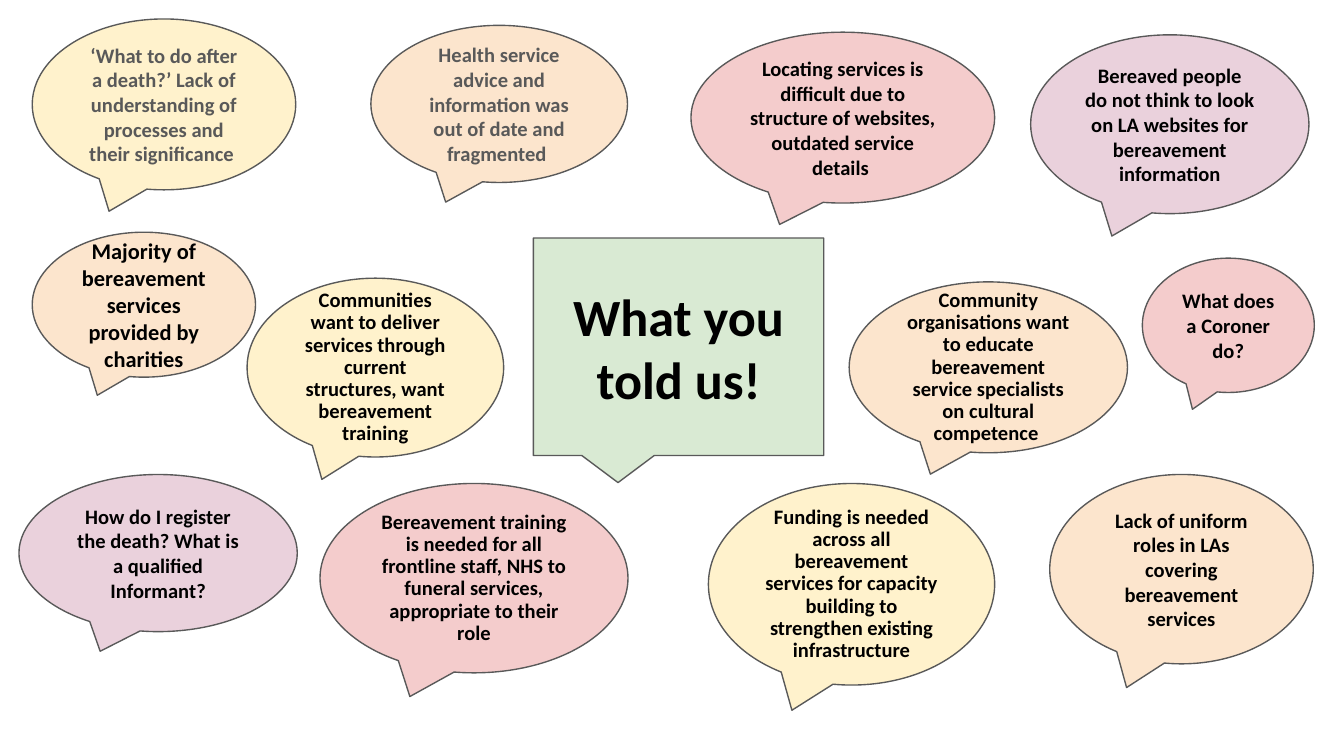
from pptx import Presentation
from pptx.dml.color import RGBColor
from pptx.enum.shapes import MSO_SHAPE
from pptx.enum.text import MSO_ANCHOR, PP_ALIGN
from pptx.util import Cm, Pt

OVAL = MSO_SHAPE.OVAL_CALLOUT
BOX = MSO_SHAPE.ROUNDED_RECTANGULAR_CALLOUT
MIDDLE = MSO_ANCHOR.MIDDLE
CENTER = PP_ALIGN.CENTER

PINK = RGBColor(0xF4, 0xCC, 0xCC)
MAUVE = RGBColor(0xEA, 0xD1, 0xDC)
PEACH = RGBColor(0xFC, 0xE5, 0xCD)
CREAM = RGBColor(0xFF, 0xF2, 0xCC)
GREEN = RGBColor(0xD9, 0xEA, 0xD3)
BLACK = RGBColor(0x00, 0x00, 0x00)
GRAY = RGBColor(0x59, 0x59, 0x59)

prs = Presentation()
prs.slide_width = Cm(25.4)
prs.slide_height = Cm(14.29)
slide = prs.slides.add_slide(prs.slide_layouts[6])

bubbles = [
    (OVAL, 13.06, 0.61, 5.74, 3.23, PINK, BLACK, 11, 1,
     "Locating services is difficult due to structure of websites, outdated service details "),
    (OVAL, 19.48, 0.66, 5.26, 3.38, MAUVE, BLACK, 11, 1,
     "Bereaved people do not think to look on LA websites for bereavement information"),
    (OVAL, 0.61, 4.39, 4.22, 2.74, PEACH, BLACK, 12, 1,
     "Majority of bereavement services provided by charities"),
    (OVAL, 19.84, 8.97, 4.98, 3.58, PEACH, BLACK, 11, 1,
     "Lack of uniform roles in LAs covering bereavement services"),
    (OVAL, 13.39, 9.14, 5.41, 3.81, CREAM, BLACK, 11, 0.9,
     "Funding is needed across all bereavement services for capacity building "
     "to strengthen existing infrastructure"),
    (OVAL, 6.05, 9.14, 5.82, 3.58, PINK, BLACK, 11, 0.9,
     "Bereavement training is needed for all frontline staff, NHS to funeral services, "
     "appropriate to their role"),
    (OVAL, 4.67, 5.26, 4.85, 3.38, CREAM, BLACK, 11, 0.9,
     "Communities want to deliver services through current structures, want bereavement training"),
    (OVAL, 16.05, 5.33, 5.26, 3.23, PEACH, BLACK, 11, 0.9,
     "Community organisations want to educate bereavement service specialists "
     "on cultural competence "),
    (BOX, 10.08, 4.5, 5.49, 4.11, GREEN, BLACK, 28, 1, "What you told us!"),
    (OVAL, 7.01, 0.48, 4.85, 2.97, PEACH, GRAY, 11, 1,
     "Health service advice and information was out of date and fragmented "),
    (OVAL, 0.61, 0.36, 4.98, 3.23, CREAM, GRAY, 11, 1,
     "‘What to do after a death?’ Lack of understanding of processes and their significance "),
    (OVAL, 21.59, 4.88, 3.25, 2.54, PINK, BLACK, 11, 1, "What does a Coroner do?"),
    (OVAL, 0.36, 8.97, 5.26, 2.97, MAUVE, BLACK, 11, 1,
     "How do I register the death? What is a qualified Informant?"),
]

for kind, left, top, width, height, fill, ink, size, lead, text in bubbles:
    shape = slide.shapes.add_shape(kind, Cm(left), Cm(top), Cm(width), Cm(height))
    shape.shadow.inherit = False
    shape.fill.solid()
    shape.fill.fore_color.rgb = fill
    shape.line.color.rgb = GRAY
    shape.line.width = Pt(0.75)
    if kind == BOX:
        shape.adjustments[2] = 0
    frame = shape.text_frame
    frame.word_wrap = True
    frame.vertical_anchor = MIDDLE
    frame.margin_left = frame.margin_right = Cm(0.25)
    frame.margin_top = frame.margin_bottom = Cm(0.25)
    frame.text = text
    para = frame.paragraphs[0]
    para.alignment = CENTER
    para.line_spacing = lead
    font = para.runs[0].font
    font.name = "Calibri"
    font.size = Pt(size)
    font.bold = True
    font.color.rgb = ink

prs.save("out.pptx")
